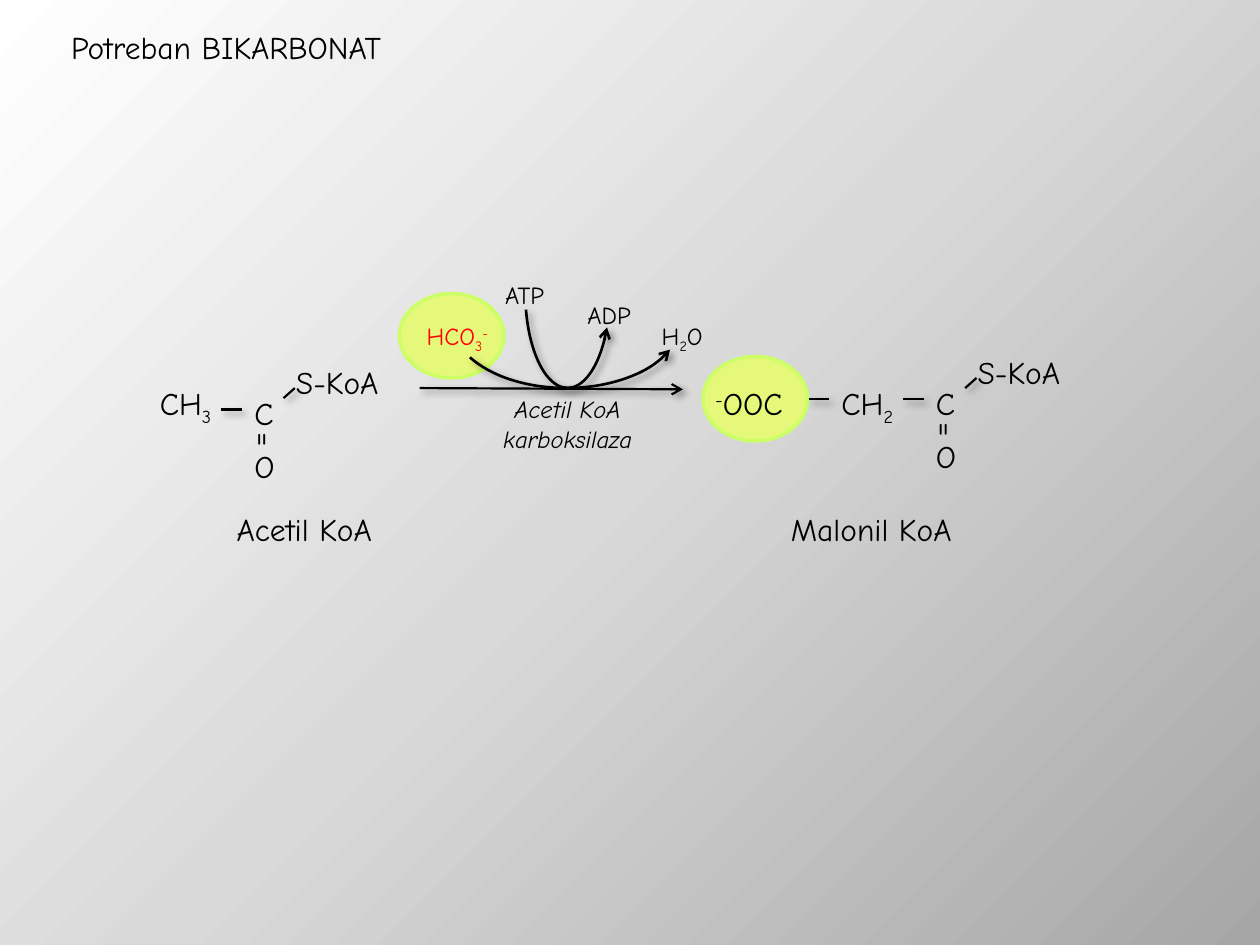
from lxml import etree
from pptx import Presentation
from pptx.dml.color import RGBColor
from pptx.enum.shapes import MSO_CONNECTOR, MSO_SHAPE
from pptx.enum.text import MSO_AUTO_SIZE, PP_ALIGN
from pptx.oxml.ns import qn
from pptx.util import Inches, Pt

STRAIGHT = MSO_CONNECTOR.STRAIGHT
ARC, OVAL = MSO_SHAPE.ARC, MSO_SHAPE.OVAL
CENTER, LEFT = PP_ALIGN.CENTER, PP_ALIGN.LEFT
FIT, FIXED = MSO_AUTO_SIZE.SHAPE_TO_FIT_TEXT, MSO_AUTO_SIZE.NONE

FONT = "Comic Neue"
COLORS = {"ink": "000000", "red": "FF0000", "halo": "E6F87A", "rim": "CCFF66"}
BACKGROUND = [(0, "FFFFFF"), (50, "D9D9D9"), (100, "A6A6A6")]
SUB, SUPER = -25, 30

# Content: places are (left, top, width, height) in inches
HALOS = [(5.58, 2.83, 0.83, 0.67), (3.17, 2.33, 0.83, 0.67)]
# Each label is a list of lines, each line a list of (text, baseline) runs
TITLES = [
    ([[("Potreban BIKARBONAT", 0)]], (0.17, 0.17, 3.25, 0.42)),
    ([[("Acetil KoA", 0)]], (1.58, 4, 1.67, 0.42)),
    ([[("Malonil KoA", 0)]], (6.08, 4, 1.67, 0.42)),
]
REAGENTS = [
    ([[("HCO", 0), ("3", SUB), ("-", SUPER)]], (3.17, 2.5, 0.92, 0.33), {"color": "red"}),
    ([[("H", 0), ("2", SUB), ("O", 0)]], (5.08, 2.5, 0.67, 0.33), {}),
    ([[("ATP", 0)]], (3.83, 2.17, 0.67, 0.33), {}),
    ([[("ADP", 0)]], (4.5, 2.33, 0.67, 0.33), {}),
    ([[("Acetil KoA", 0)], [("karboksilaza", 0)]], (3.67, 3.08, 1.67, 0.58), {"italic": True}),
]
CARBON_PARTS = [
    ([[("-", SUPER), ("OOC", 0)]], (5.58, 3, 0.83, 0.4)),
    ([[("CH", 0), ("3", SUB)]], (1.17, 3, 0.67, 0.4)),
    ([[("CH", 0), ("2", SUB)]], (6.58, 3, 0.67, 0.4)),
]
BONDS = [(1.75, 3.25, 1.92, 3.25), (7.17, 3.17, 7.33, 3.17), (6.42, 3.17, 6.58, 3.17)]
REACTION = (3.33, 3.08, 5.42, 3.09)
ARCS = [((3.58, 2, 1.83, 1.08), (9.574, 95.301)), ((4.17, 1.58, 0.67, 1.5), (24.459, 95.301))]
# Thioester ends: offsets from the carbon box, repeated at two places
THIOESTERS = [(1.92, 3.08), (7.33, 3)]
THIOESTER_ATOMS = [
    ("C", (0, 0, 0.35, 0.4), 0),
    ("O", (0, 0.42, 0.4, 0.4), 0),
    ("=", (0.03, 0.22, 0.33, 0.4), 90),
    ("S-KoA", (0.33, -0.25, 0.95, 0.4), 0),
]
THIOESTER_BOND = (0.33, 0.08, 0.42, 0)


def rgb(name):
    return RGBColor.from_string(COLORS[name])


def inches(values):
    return [Inches(value) for value in values]


def add_label(shapes, lines, place, size=18, color="ink", italic=None,
              align=CENTER, fit=FIXED, wrap=True):
    box = shapes.add_textbox(*inches(place))
    frame = box.text_frame
    frame.word_wrap, frame.auto_size = wrap, fit
    font_values = {"name": FONT, "size": Pt(size), "italic": italic}
    for index, line in enumerate(lines):
        para = frame.add_paragraph() if index else frame.paragraphs[0]
        para.alignment = align
        for text, baseline in line:
            span = para.add_run()
            span.text = text
            for key, value in font_values.items():
                setattr(span.font, key, value)
            span.font.color.rgb = rgb(color)
            if baseline:
                span.font._element.set("baseline", str(baseline * 1000))
    return box


def style_stroke(shape, width, arrow=None):
    """Black line with a soft shadow and an optional arrowhead."""
    shape.line.color.rgb = rgb("ink")
    shape.line.width = Pt(width)
    if arrow:
        etree.SubElement(shape.line._get_or_add_ln(), qn("a:" + arrow), type="arrow")
    properties = shape._element.spPr
    for old in properties.findall(qn("a:effectLst")):
        properties.remove(old)
    effects = etree.SubElement(properties, qn("a:effectLst"))
    shadow = etree.SubElement(effects, qn("a:outerShdw"), blurRad=str(Pt(4)),
                              dist=str(Pt(3)), dir=str(45 * 60000), rotWithShape="0")
    shade = etree.SubElement(shadow, qn("a:srgbClr"), val=COLORS["ink"])
    etree.SubElement(shade, qn("a:alpha"), val="40000")


def add_stroke(shapes, ends, arrow=None):
    style_stroke(shapes.add_connector(STRAIGHT, *inches(ends)), 1.25, arrow)


def add_thioester(shapes, left, top):
    group = shapes.add_group_shape()
    for text, (dx, dy, width, height), turn in THIOESTER_ATOMS:
        box = add_label(group.shapes, [[(text, 0)]], (left + dx, top + dy, width, height),
                        align=LEFT, fit=FIT, wrap=False)
        box.rotation = turn
    x1, y1, x2, y2 = THIOESTER_BOND
    add_stroke(group.shapes, (left + x1, top + y1, left + x2, top + y2))


def paint_background(page):
    fill = page.background.fill
    fill.gradient()
    fill.gradient_angle = 315
    stops = page.background._cSld.find(".//" + qn("a:gsLst"))
    for stop in list(stops):
        stops.remove(stop)
    for position, color in BACKGROUND:
        stop = etree.SubElement(stops, qn("a:gs"), pos=str(position * 1000))
        etree.SubElement(stop, qn("a:srgbClr"), val=color)


def main():
    deck = Presentation()
    deck.slide_width, deck.slide_height = Inches(10), Inches(7.5)
    page = deck.slides.add_slide(deck.slide_layouts[6])
    shapes = page.shapes
    paint_background(page)

    # Highlights behind the bicarbonate carbon
    for place in HALOS:
        halo = shapes.add_shape(OVAL, *inches(place))
        halo.shadow.inherit = False
        halo.fill.solid()
        halo.fill.fore_color.rgb = rgb("halo")
        halo.line.color.rgb = rgb("rim")
        halo.line.width = Pt(2)

    # Reaction arrow and curved side arrows
    add_stroke(shapes, REACTION, "tailEnd")
    for place, angles in ARCS:
        arc = shapes.add_shape(ARC, *inches(place))
        arc.adjustments[0], arc.adjustments[1] = angles
        arc.fill.background()
        style_stroke(arc, 1.5, "headEnd")

    # Names and reagents
    for lines, place in TITLES:
        add_label(shapes, lines, place)
    for lines, place, look in REAGENTS:
        add_label(shapes, lines, place, size=14, **look)

    # Molecules
    for lines, place in CARBON_PARTS:
        add_label(shapes, lines, place, align=LEFT, fit=FIT)
    for ends in BONDS:
        add_stroke(shapes, ends)
    for left, top in THIOESTERS:
        add_thioester(shapes, left, top)

    deck.save("out.pptx")


if __name__ == "__main__":
    main()
